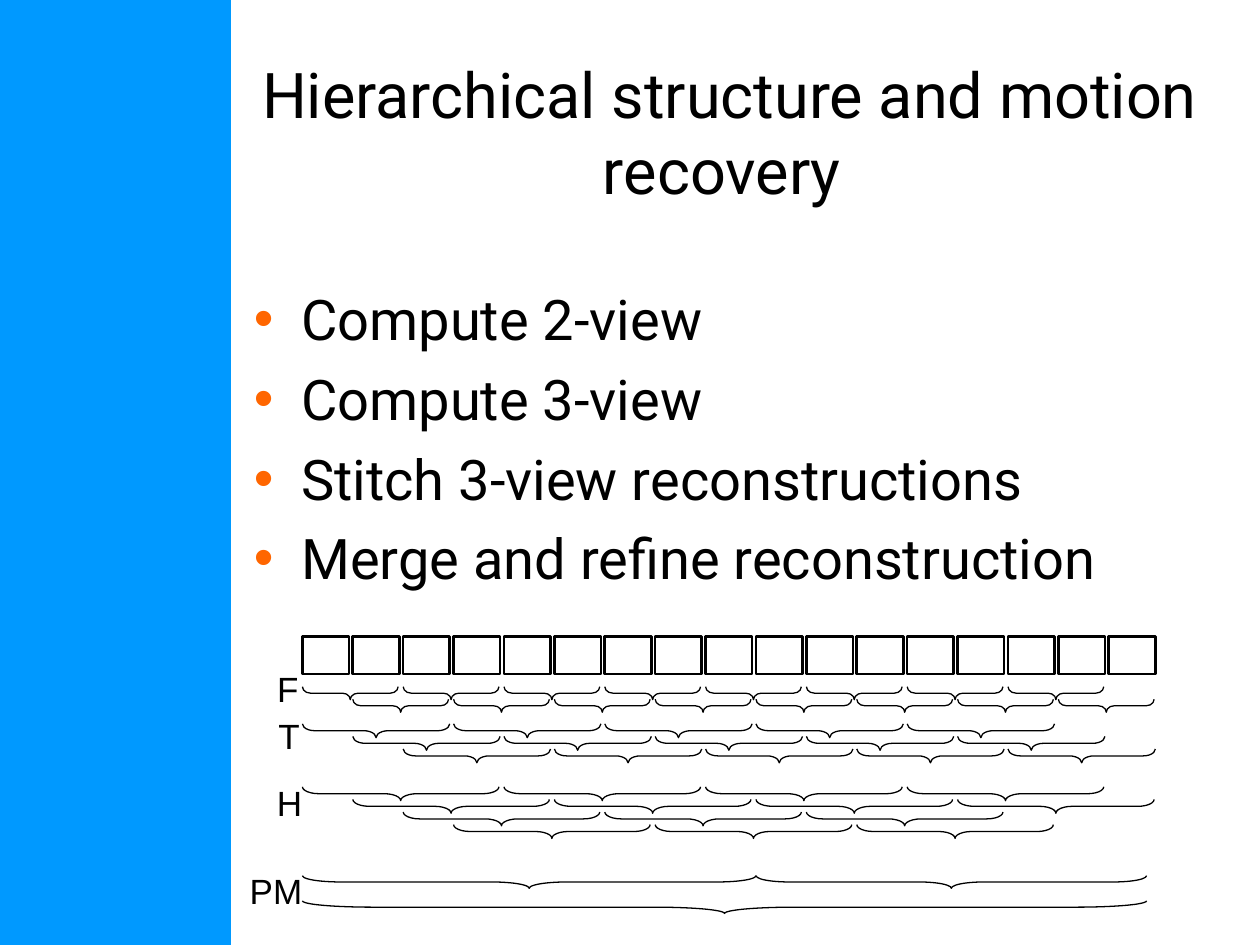
from lxml import etree
from pptx import Presentation
from pptx.dml.color import RGBColor
from pptx.enum.shapes import MSO_SHAPE
from pptx.enum.text import MSO_ANCHOR, PP_ALIGN
from pptx.oxml.ns import qn
from pptx.util import Pt

RECT, BRACE = MSO_SHAPE.RECTANGLE, MSO_SHAPE.RIGHT_BRACE
TOP, MIDDLE = MSO_ANCHOR.TOP, MSO_ANCHOR.MIDDLE
LEFT, CENTER = PP_ALIGN.LEFT, PP_ALIGN.CENTER

COLORS = {"band": "0099FF", "ink": "000000", "dot": "FF6600"}
FRAMES = 17
PITCH = 28.8

# Label, label left, label top, frames per brace, first brace top, width, depth
LEVELS = [
    ("F", 150.5, 378, 2, 392.4, 54.7, 7.4),
    ("T", 151.2, 404.6, 3, 413.6, 84.2, 7.9),
    ("H", 151.2, 442.8, 4, 449.6, 112.3, 7.9),
]


def color(name):
    return RGBColor.from_string(COLORS[name])


def add_bullet(para, indent):
    props = para._p.get_or_add_pPr()
    props.set("marL", str(Pt(indent)))
    props.set("indent", str(-Pt(indent)))
    tint = etree.SubElement(props, qn("a:buClr"))
    etree.SubElement(tint, qn("a:srgbClr"), val=COLORS["dot"])
    etree.SubElement(props, qn("a:buFont"), typeface="Arial")
    etree.SubElement(props, qn("a:buChar"), char="•")


def add_text(slide, lines, box, size, font="Roboto", align=LEFT, anchor=TOP,
             wrap=True, gap=0, indent=0):
    frame = slide.shapes.add_textbox(*map(Pt, box)).text_frame
    frame.word_wrap = wrap
    frame.vertical_anchor = anchor
    for i, line in enumerate(lines):
        para = frame.paragraphs[0] if i == 0 else frame.add_paragraph()
        para.text = line
        para.alignment = align
        if i and gap:
            para.space_before = Pt(gap)
        if indent:
            add_bullet(para, indent)
        para.font.size = Pt(size)
        para.font.name = font
        para.font.color.rgb = color("ink")


def add_form(slide, kind, box, fill=None, line=None):
    form = slide.shapes.add_shape(kind, *map(Pt, box))
    form.shadow.inherit = False
    if fill:
        form.fill.solid()
        form.fill.fore_color.rgb = color(fill)
    else:
        form.fill.background()
    if line:
        form.line.color.rgb = color("ink")
        form.line.width = Pt(line)
    else:
        form.line.fill.background()
    return form


def add_brace(slide, left, top, width, depth):
    """Draw a brace that lies flat and points down, in the given box."""
    x = left + (width - depth) / 2
    y = top + (depth - width) / 2
    brace = add_form(slide, BRACE, (x, y, depth, width), line=0.75)
    brace.rotation = 90
    brace.adjustments[0] = width / depth / 12
    brace.adjustments[1] = 0.5


def add_label(slide, text, left, top, width):
    add_text(slide, [text], (left, top, width, 31), 20, font="Arial",
             align=CENTER, wrap=False)


def add_frames(slide, left, top, width, height):
    for i in range(FRAMES):
        add_form(slide, RECT, (left + i * PITCH, top, width, height), line=1.5)


def add_level(slide, left, top, width, depth, span):
    """Stack one row of braces for each possible first frame."""
    for row in range(span):
        for i in range((FRAMES - row) // span):
            x = left + (row + i * span) * PITCH
            add_brace(slide, x, top + row * 7.2, width, depth)


def add_merge(slide, left, top, width, depth):
    """Two partial braces above one that covers the whole width."""
    half = 259.2
    add_brace(slide, left, top, half, depth)
    add_brace(slide, left + half, top, width - half, depth)
    add_brace(slide, left, top + 14.4, width, depth)


def main():
    deck = Presentation()
    deck.slide_width, deck.slide_height = Pt(720), Pt(540)
    slide = deck.slides.add_slide(deck.slide_layouts[6])

    # Side band, title and steps
    add_form(slide, RECT, (0, 0, 132, 540), fill="band")
    add_text(slide, ["Hierarchical structure and motion recovery "],
             (132, 30, 570, 90), 36, align=CENTER, anchor=MIDDLE)
    add_text(slide, ["Compute 2-view", "Compute 3-view",
                     "Stitch 3-view reconstructions",
                     "Merge and refine reconstruction"],
             (138, 159, 564, 363), 32, gap=7.2, indent=27)

    # Image frames and the hierarchy below them
    left = 172.8
    add_frames(slide, left, 363.6, 26.6, 21.6)
    for name, x, y, span, top, width, depth in LEVELS:
        add_level(slide, left, top, width, depth, span)
        add_label(slide, name, x, y, 28)
    add_merge(slide, left, 500.4, 482.4, 7.2)
    add_label(slide, "PM", 135.4, 493.2, 44.6)

    deck.save("out.pptx")


if __name__ == "__main__":
    main()
